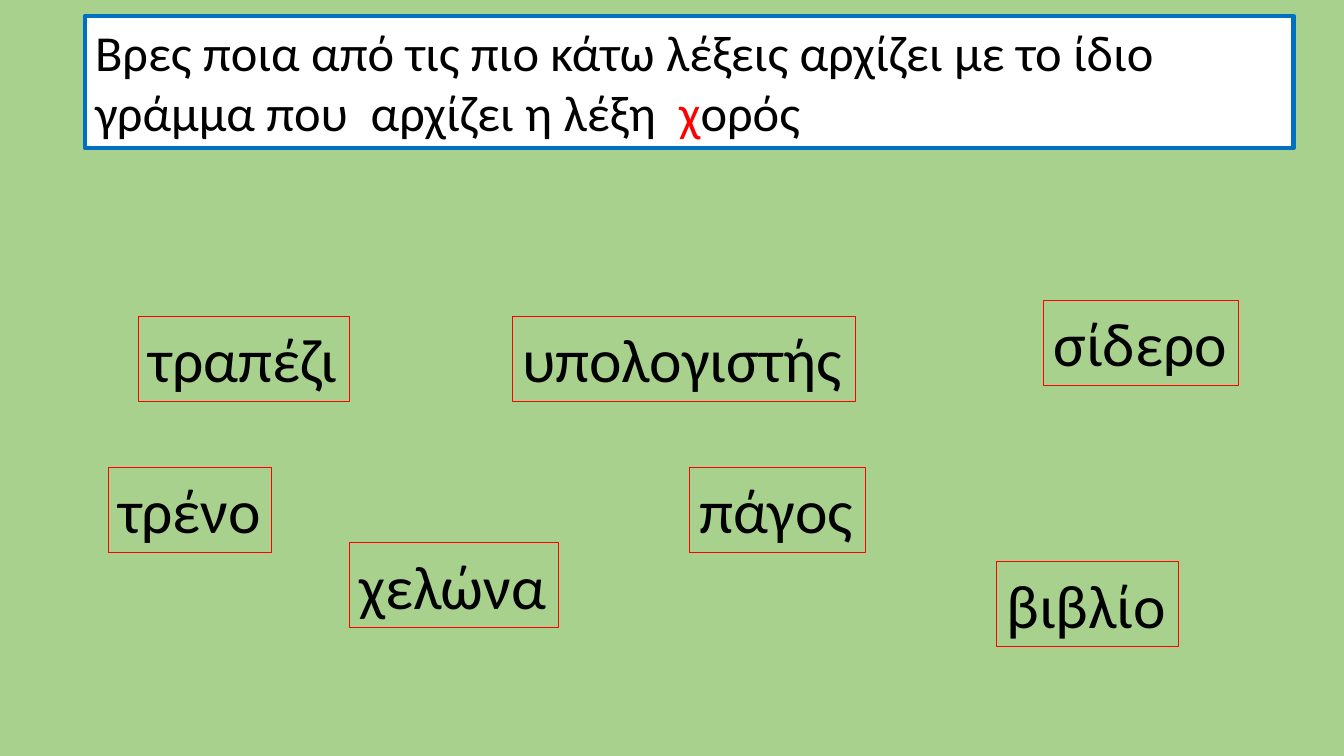
from pptx import Presentation
from pptx.dml.color import RGBColor
from pptx.enum.text import MSO_ANCHOR, MSO_AUTO_SIZE, PP_ALIGN
from pptx.util import Pt

EMU_PER_PX = 9525
FONT = "Calibri"
COLORS = {
    "background": "A9D18E",
    "panel": "FFFFFF",
    "panel_line": "0070C0",
    "accent": "FF0000",
    "text": "000000",
}
INSTRUCTION = [
    ("Βρες ποια από τις πιο κάτω λέξεις αρχίζει με το ίδιο γράμμα που  αρχίζει η λέξη  ", "text"),
    ("χ", "accent"),
    ("ορός", "text"),
]
WORD_HEIGHT = 81
WORDS = [
    ("τραπέζι", 132, 301, 201),
    ("υπολογιστής", 488, 301, 327),
    ("σίδερο", 994, 286, 186),
    ("τρένο", 103, 445, 156),
    ("πάγος", 657, 445, 167),
    ("χελώνα", 333, 517, 199),
    ("βιβλίο", 949, 535, 173),
]


def px(n):
    """Convert pixels to EMU."""
    return n * EMU_PER_PX


def color(name):
    """Look up a palette colour."""
    return RGBColor.from_string(COLORS[name])


def place(sp, left, top, width, height):
    """Position a shape in pixels."""
    sp.left, sp.top, sp.width, sp.height = map(px, (left, top, width, height))


def outline(sp, name, width):
    """Give a shape a solid outline."""
    sp.line.color.rgb = color(name)
    sp.line.width = Pt(width)


def write(sp, runs, size, wrap):
    """Write coloured runs into a shape as one left-aligned paragraph."""
    tf = sp.text_frame
    tf.word_wrap = wrap
    tf.auto_size = MSO_AUTO_SIZE.SHAPE_TO_FIT_TEXT
    tf.vertical_anchor = MSO_ANCHOR.TOP
    p = tf.paragraphs[0]
    p.alignment = PP_ALIGN.LEFT
    for text, name in runs:
        r = p.add_run()
        r.text = text
        r.font.name = FONT
        r.font.size = Pt(size)
        r.font.color.rgb = color(name)


def add_instruction(slide):
    """Format the title placeholder as the framed instruction."""
    sp = slide.shapes.title
    place(sp, 81, 15, 1151, 126)
    sp.fill.solid()
    sp.fill.fore_color.rgb = color("panel")
    outline(sp, "panel_line", 3)
    write(sp, INSTRUCTION, 36, True)


def add_word(slide, word, left, top, width):
    """Add one outlined word box."""
    sp = slide.shapes.add_textbox(px(left), px(top), px(width), px(WORD_HEIGHT))
    outline(sp, "accent", 0.75)
    write(sp, [(word, "text")], 44, False)


def main():
    """Build and save the slide."""
    prs = Presentation()
    prs.slide_width, prs.slide_height = px(1280), px(720)
    slide = prs.slides.add_slide(prs.slide_layouts.get_by_name("Title Only"))
    slide.background.fill.solid()
    slide.background.fill.fore_color.rgb = color("background")
    add_instruction(slide)
    for word, left, top, width in WORDS:
        add_word(slide, word, left, top, width)
    prs.save("out.pptx")


if __name__ == "__main__":
    main()
